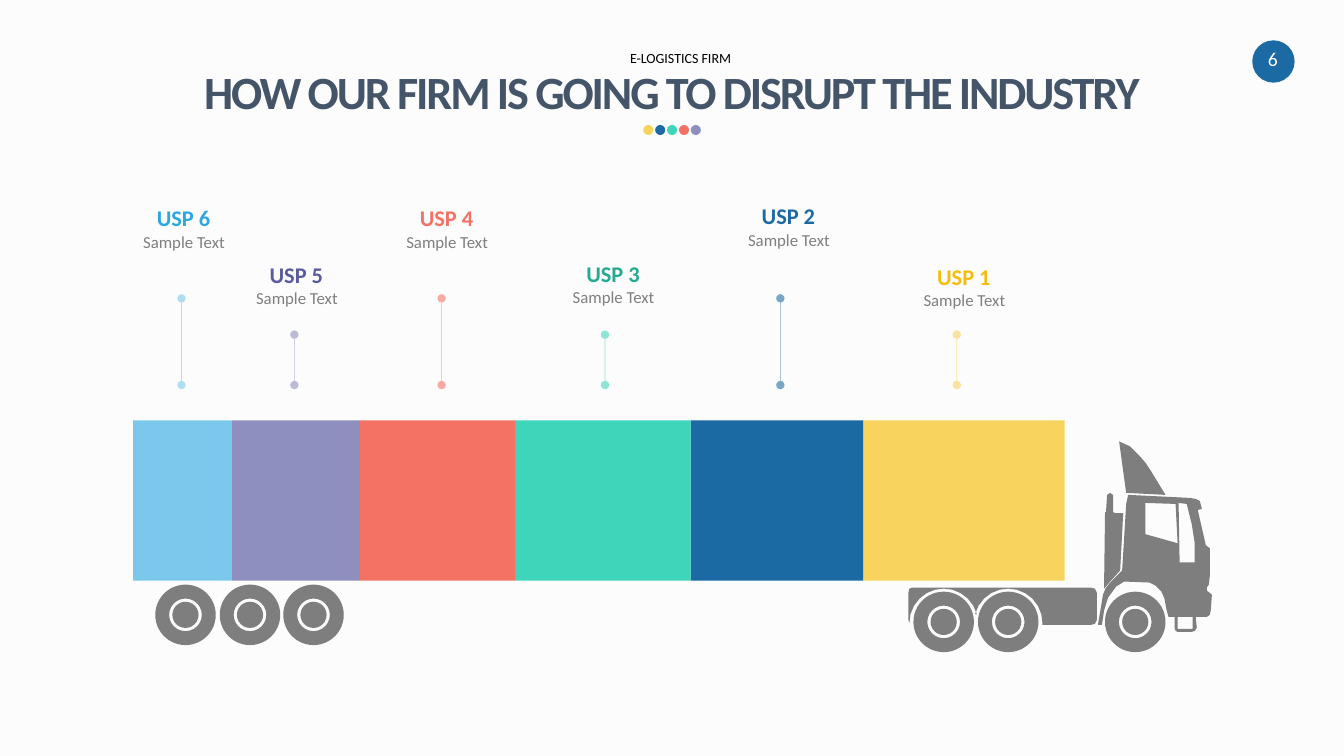
from math import cos, radians, sin

from lxml.etree import SubElement
from pptx import Presentation
from pptx.dml.color import RGBColor
from pptx.enum.shapes import MSO_CONNECTOR, MSO_SHAPE
from pptx.enum.text import MSO_ANCHOR, MSO_AUTO_SIZE, PP_ALIGN
from pptx.oxml.ns import qn
from pptx.util import Inches, Pt

COLORS = {
    "page": "FCFCFC", "white": "FFFFFF", "black": "000000", "title": "445469",
    "truck": "7E7E7E", "caption": "7F7F7F", "yellow": "F8D35E", "blue": "1B6AA3",
    "green": "3FD5BA", "red": "F47264", "violet": "8F8FBF", "sky": "7CC8EC",
    "dark yellow": "F4BD0C", "dark green": "25AA92", "dark violet": "5B5B9F",
    "dark sky": "2DA7E1",
}

prs = Presentation()
prs.slide_width, prs.slide_height = Inches(13.33), Inches(7.5)
slide = prs.slides.add_slide(prs.slide_layouts[5])
slide.background.fill.solid()
slide.background.fill.fore_color.rgb = RGBColor.from_string(COLORS["page"])
shapes = slide.shapes


def write(text, left, top, width, height, size, color, bold=False, wrap=True,
          spacing=None, box=None):
    """Put centred text in the given box, or in a new text box."""
    if box is None:
        box = shapes.add_textbox(0, 0, 0, 0)
    box.left, box.top = Inches(left), Inches(top)
    box.width, box.height = Inches(width), Inches(height)
    frame = box.text_frame
    frame.text = text
    frame.word_wrap = wrap
    frame.auto_size = MSO_AUTO_SIZE.NONE
    frame.vertical_anchor = MSO_ANCHOR.TOP
    frame.paragraphs[0].alignment = PP_ALIGN.CENTER
    run = frame.paragraphs[0].runs[0]
    run.font.name, run.font.size, run.font.bold = "Calibri", Pt(size), bold
    run.font.color.rgb = RGBColor.from_string(COLORS[color])
    if spacing is not None:
        run.font._element.set("spc", str(spacing))
    return frame


def paint(shape, color):
    shape.shadow.inherit = False
    shape.fill.solid()
    shape.fill.fore_color.rgb = RGBColor.from_string(COLORS[color])
    shape.line.fill.background()


# Header
badge = shapes.add_shape(MSO_SHAPE.OVAL, Inches(12.42), Inches(0.4), Inches(0.42), Inches(0.42))
paint(badge, "blue")
write("6", 12.41, 0.42, 0.43, 0.34, 14, "white", wrap=False)
write("E-LOGISTICS FIRM", 6.08, 0.44, 1.34, 0.27, 10, "black")
heading = write("HOW OUR FIRM IS GOING TO DISRUPT THE INDUSTRY", 1.96, 0.63, 9.41, 0.56,
                33, "title", bold=True, wrap=False, spacing=-150, box=shapes.title)
heading.margin_left = heading.margin_right = heading.margin_top = heading.margin_bottom = 0
for i, color in enumerate(["yellow", "blue", "green", "red", "violet"]):
    dot = shapes.add_shape(MSO_SHAPE.OVAL, Inches(6.38 + i * 0.118), Inches(1.24),
                           Inches(0.1), Inches(0.1))
    paint(dot, color)

# Truck outlines: each is a list of contours, the first outside and the rest holes
wheel_arches = [
    (center + 0.34 * cos(radians(angle)), 6.18 - 0.34 * sin(radians(angle)))
    for center, start, end in [(10.0, 0, 165), (9.36, 15, 180)]
    for angle in range(start, end + 1, 15)
]
chassis = [[(9.05, 5.83), (10.82, 5.83), (10.86, 5.84), (10.88, 5.88), (10.88, 6.15),
            (10.86, 6.19), (10.82, 6.2), (10.34, 6.2), *wheel_arches, (9.01, 6.15),
            (9.01, 5.88), (9.02, 5.84)]]
cab = [
    [(10.94, 5.9), (10.97, 5.83), (11.02, 5.77), (11.08, 5.71), (11.13, 5.66),
     (11.17, 5), (11.19, 4.91), (11.8, 4.94), (11.86, 4.95), (11.9, 4.97),
     (11.92, 5.05), (11.88, 5.06), (11.96, 5.41), (12, 5.44), (12, 5.71),
     (11.99, 5.8), (11.97, 5.83), (11.97, 5.86), (12.02, 5.9), (12.01, 6.05),
     (12, 6.1), (11.97, 6.12), (11.86, 6.12), (11.87, 6.23), (11.85, 6.26),
     (11.82, 6.27), (11.68, 6.27), (11.66, 6.26), (11.65, 6.23), (11.65, 6.12),
     (11.59, 6.12), (11.57, 6.05), (11.55, 5.94), (11.52, 5.87), (11.46, 5.81),
     (11.4, 5.78), (11.15, 5.77), (11.07, 5.82), (10.99, 5.93), (10.95, 6.06),
     (10.93, 6.2), (10.89, 6.2)],
    [(11.77, 5), (11.69, 4.99), (11.7, 5.58), (11.85, 5.58), (11.85, 5.39), (11.82, 5.2)],
    [(11.68, 6.12), (11.68, 6.24), (11.83, 6.24), (11.83, 6.12)],
    [(11.68, 5.39), (11.66, 5), (11.36, 4.99), (11.36, 5.3)],
]
exhaust = [[(10.96, 5.08), (10.97, 5.08), (10.98, 4.91), (11.01, 4.89), (11.04, 4.91),
            (11.04, 5.08), (11.06, 5.09), (11.14, 5.09), (11.11, 5.66), (11.01, 5.77),
            (10.95, 5.84)]]
wind_deflector = [[(11.56, 4.91), (11.42, 4.68), (11.36, 4.59), (11.3, 4.52),
                   (11.21, 4.43), (11.1, 4.38), (11.17, 4.89)]]

for contours in [chassis, cab, exhaust, wind_deflector]:
    builder = None
    for contour in contours:
        start, *corners = [(Inches(x), Inches(y)) for x, y in contour]
        if builder is None:
            builder = shapes.build_freeform(*start)
        else:
            builder.move_to(*start)
        builder.add_line_segments(corners, close=True)
    paint(builder.convert_to_shape(), "truck")

for x, y in [(1.84, 6.1), (2.48, 6.1), (3.11, 6.1), (9.36, 6.17), (10, 6.17), (11.26, 6.17)]:
    for kind, size in [(MSO_SHAPE.DONUT, 0.6), (MSO_SHAPE.OVAL, 0.26)]:
        wheel = shapes.add_shape(kind, Inches(x - size / 2), Inches(y - size / 2),
                                 Inches(size), Inches(size))
        if kind == MSO_SHAPE.DONUT:
            wheel.adjustments[0] = 0.23
        paint(wheel, "truck")

# Load, from the cab backwards: block left and right, label centre and top, pin x and top
usps = [
    (8.56, 10.56, 9.56, 2.56, 9.49, 3.32, "yellow", "dark yellow"),
    (6.85, 8.56, 7.82, 1.96, 7.74, 2.96, "blue", "blue"),
    (5.11, 6.85, 6.08, 2.53, 6, 3.32, "green", "dark green"),
    (3.57, 5.11, 4.43, 1.98, 4.38, 2.96, "red", "red"),
    (2.3, 3.57, 2.94, 2.54, 2.92, 3.32, "violet", "dark violet"),
    (1.32, 2.3, 1.82, 1.98, 1.8, 2.96, "sky", "dark sky"),
]
for number, usp in enumerate(usps, 1):
    left, right, center, label_top, pin_x, pin_top, color, label_color = usp
    block = shapes.add_shape(MSO_SHAPE.RECTANGLE, Inches(left), Inches(4.17),
                             Inches(right - left), Inches(1.59))
    paint(block, color)
    write(f"USP {number}", center - 0.37, label_top, 0.74, 0.37, 16, label_color,
          bold=True, wrap=False)
    write("Sample Text", center - 1.14, label_top + 0.27, 2.29, 0.3, 12, "caption")

    pin = shapes.add_connector(MSO_CONNECTOR.STRAIGHT, Inches(pin_x), Inches(pin_top),
                               Inches(pin_x), Inches(3.82))
    pin.line.width = Pt(0.5)
    pin.line.color.rgb = RGBColor.from_string(COLORS[color])
    outline = pin.line._get_or_add_ln()
    SubElement(outline.find(".//" + qn("a:srgbClr")), qn("a:alpha"), val="58000")
    for end in ["a:headEnd", "a:tailEnd"]:
        SubElement(outline, qn(end), type="oval")
    SubElement(pin._element.spPr, qn("a:effectLst"))

prs.save("out.pptx")
